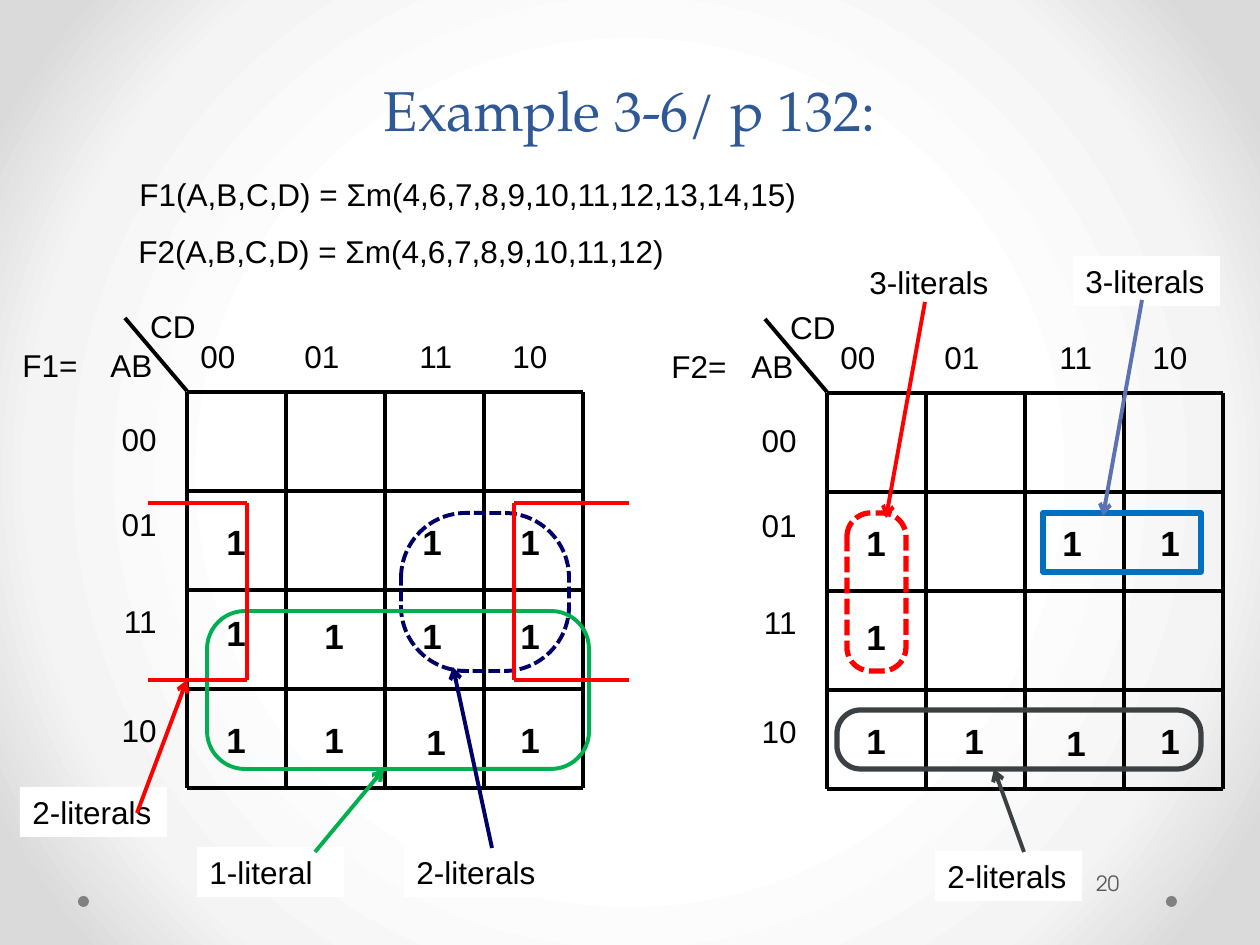
from dataclasses import dataclass, field

from lxml.etree import SubElement
from pptx import Presentation
from pptx.dml.color import RGBColor
from pptx.enum.dml import MSO_LINE_DASH_STYLE as Dash
from pptx.enum.shapes import MSO_CONNECTOR as Link, MSO_SHAPE as Preset
from pptx.enum.text import MSO_ANCHOR as Anchor, PP_ALIGN as Align
from pptx.oxml import parse_xml
from pptx.oxml.ns import nsdecls, qn
from pptx.util import Emu, Pt

PX_PER_INCH = 126
CELL = 99
MAP_SIZE = 4 * CELL
BLACK, WHITE, RED, NAVY, GREEN = "000000", "FFFFFF", "FF0000", "000066", "00B050"
BLUE, SLATE, INDIGO = "0070C0", "3B4042", "5C72B2"


@dataclass
class KarnaughMap:
    name: str
    left: int
    top: int
    name_left: int
    axis_tab: int
    ones: list[tuple[int, int]]
    nudges: dict[tuple[int, int], tuple[int, int]] = field(default_factory=dict)


@dataclass
class Loop:
    preset: int
    box: tuple[int, int, int, int]
    color: str
    weight: float
    rounding: float | None = None
    dashed: bool = False


@dataclass
class Callout:
    text: str
    left: int
    top: int
    start: tuple[int, int]
    end: tuple[int, int]
    color: str


MAPS = [
    KarnaughMap("F1=", 187, 392, 10, 88,
                [(0, 1), (2, 1), (3, 1), *((c, r) for r in (2, 3) for c in range(4))],
                {(0, 2): (0, -3), (2, 3): (4, 2)}),
    KarnaughMap("F2=", 827, 393, 659, 80,
                [(0, 1), (2, 1), (3, 1), (0, 2), *((c, 3) for c in range(4))],
                {(2, 3): (4, 2)}),
]
ONE_TOPS = (0, 122, 216, 320)
COLUMN_TABS = [104, 219, 312]
ROW_CODES = [("00", 0), ("01", 47), ("11", 59), ("10", 71)]

LOOPS = [
    Loop(Preset.ROUNDED_RECTANGLE, (401, 513, 168, 158), NAVY, 2.25, 0.41, True),
    Loop(Preset.ROUNDED_RECTANGLE, (207, 611, 382, 158), GREEN, 2.25, 0.24),
    Loop(Preset.RECTANGLE, (1043, 513, 158, 59), BLUE, 3),
    Loop(Preset.ROUNDED_RECTANGLE, (837, 710, 364, 59), SLATE, 3, 0.4),
    Loop(Preset.ROUNDED_RECTANGLE, (847, 513, 59, 158), RED, 3, 0.4, True),
]
CALLOUTS = [
    Callout("1-literal", 197, 847, (315, 852), (384, 769), GREEN),
    Callout("2-literals", 20, 787, (137, 813), (187, 680), RED),
    Callout("2-literals", 404, 847, (492, 848), (453, 667), NAVY),
    Callout("2-literals", 935, 851, (1024, 852), (994, 769), SLATE),
    Callout("3-literals", 1073, 256, (1142, 300), (1103, 516), INDIGO),
    Callout("3-literals", 857, 257, (925, 302), (886, 518), RED),
]


def px(length: int) -> Emu:
    return Emu(round(length * 914400 / PX_PER_INCH))


def rgb(color: str) -> RGBColor:
    return RGBColor.from_string(color)


def set_tabs(paragraph, stops: list[int]) -> None:
    tab_list = SubElement(paragraph._p.get_or_add_pPr(), qn("a:tabLst"))
    for stop in stops:
        SubElement(tab_list, qn("a:tab"), pos=str(px(stop)), algn="l")


def write(paragraph, text: str, size: int = 18, font: str = "Arial",
          color: str = BLACK, bold: bool = False) -> None:
    run = paragraph.add_run()
    run.text = text
    run.font.size, run.font.name, run.font.bold = Pt(size), font, bold
    run.font.color.rgb = rgb(color)


def add_label(parent, text: str, left: int, top: int, width: int, height: int = 50,
              align=Align.LEFT, tabs: list[int] | None = None, **style):
    label = parent.add_textbox(px(left), px(top), px(width), px(height))
    label.text_frame.word_wrap = True
    paragraph = label.text_frame.paragraphs[0]
    paragraph.alignment = align
    if tabs:
        set_tabs(paragraph, tabs)
    write(paragraph, text, **style)
    return label


def add_line(parent, start: tuple[int, int], end: tuple[int, int], color: str,
             weight: float = 2.25, arrow: bool = False) -> None:
    line = parent.add_connector(Link.STRAIGHT, *map(px, (*start, *end)))
    line.line.color.rgb = rgb(color)
    line.line.width = Pt(weight)
    if arrow:
        SubElement(line.line._get_or_add_ln(), qn("a:tailEnd"), type="arrow")
    SubElement(line._element.spPr, qn("a:effectLst"))


def add_plain(parent, preset: int, box: tuple[int, int, int, int], fill: str | None):
    shape = parent.add_shape(preset, *map(px, box))
    shape.shadow.inherit = False
    shape.line.fill.background()
    if fill:
        shape.fill.solid()
        shape.fill.fore_color.rgb = rgb(fill)
    else:
        shape.fill.background()
    return shape


def add_map(parent, kmap: KarnaughMap) -> None:
    left, top = kmap.left, kmap.top
    group = parent.add_group_shape().shapes
    for col, row in kmap.ones:
        dx, dy = kmap.nudges.get((col, row), (0, 0))
        add_label(group, "1", left + 27 + 98 * col + dx, top + ONE_TOPS[row] + dy, 42, 54,
                  Align.CENTER, size=20, bold=True)
    for offset in range(0, MAP_SIZE + 1, CELL):
        add_line(group, (left + offset, top), (left + offset, top + MAP_SIZE), BLACK, 2.13)
        add_line(group, (left, top + offset), (left + MAP_SIZE, top + offset), BLACK, 2.13)
    add_line(group, (left, top - 1), (left - 62, top - 74), BLACK)
    add_label(group, "00\t01\t11\t10", left + 1, top - 61, 387, tabs=COLUMN_TABS)
    add_label(group, "CD", left - 69, top - 91, 90, align=Align.RIGHT)
    add_label(group, f"{kmap.name}\tAB", kmap.name_left, top - 52, 178, tabs=[kmap.axis_tab])
    (first_code, _), *other_codes = ROW_CODES
    rows = add_label(group, first_code, left - 108, top + 22, 90, 357, Align.RIGHT)
    for code, gap in other_codes:
        paragraph = rows.text_frame.add_paragraph()
        paragraph.alignment = Align.RIGHT
        paragraph.space_before = px(gap)
        write(paragraph, code)


def add_loop(parent, loop: Loop) -> None:
    outline = add_plain(parent, loop.preset, loop.box, None)
    outline.line.color.rgb = rgb(loop.color)
    outline.line.width = Pt(loop.weight)
    if loop.rounding is not None:
        outline.adjustments[0] = loop.rounding
    if loop.dashed:
        outline.line.dash_style = Dash.SQUARE_DOT


def add_bracket(parent, outer: int, inner: int) -> None:
    group = parent.add_group_shape().shapes
    corners = [(outer, 503), (inner, 503), (inner, 680), (outer, 680)]
    for start, end in zip(corners, corners[1:]):
        add_line(group, start, end, RED)


def add_callout(parent, callout: Callout) -> None:
    tag = add_plain(parent, Preset.RECTANGLE, (callout.left, callout.top, 147, 50), WHITE)
    tag.text_frame.word_wrap = True
    tag.text_frame.vertical_anchor = Anchor.TOP
    paragraph = tag.text_frame.paragraphs[0]
    paragraph.alignment = Align.LEFT
    write(paragraph, callout.text)
    add_line(parent, callout.start, callout.end, callout.color, arrow=True)


def paint_background(slide, stops: list[tuple[int, str]]) -> None:
    slide.background.fill.solid()
    solid = slide._element.xpath(".//p:bgPr/a:solidFill")[0]
    marks = "".join(f'<a:gs pos="{pos * 1000}"><a:srgbClr val="{color}"/></a:gs>'
                    for pos, color in stops)
    solid.getparent().replace(solid, parse_xml(
        f'<a:gradFill {nsdecls("a")} rotWithShape="1"><a:gsLst>{marks}</a:gsLst>'
        '<a:path path="circle"><a:fillToRect l="50000" t="50000" r="50000" b="50000"/>'
        '</a:path></a:gradFill>'))


def main() -> None:
    deck = Presentation()
    deck.slide_width, deck.slide_height = px(1260), px(945)
    slide = deck.slides.add_slide(deck.slide_layouts[6])
    shapes = slide.shapes
    paint_background(slide, [(50, WHITE), (76, "F4F4F4"), (92, "DADADA")])
    for dot_left in (1166, 78):
        add_plain(shapes, Preset.OVAL, (dot_left, 896, 11, 11), "808080")
    title = add_label(shapes, "Example 3-6/ p 132:", 63, 78, 1134, 71, Align.CENTER,
                      size=32, font="TeX Gyre Pagella", color="2F5897")
    title.text_frame.vertical_anchor = Anchor.BOTTOM
    title.text_frame.paragraphs[0].line_spacing = Pt(58)
    number = add_label(shapes, "20", 1092, 858, 105, size=12,
                       font="TeX Gyre Adventor", color="595959")
    number.text_frame.vertical_anchor = Anchor.MIDDLE
    number.text_frame.margin_left = px(4)
    for kmap in MAPS:
        add_map(shapes, kmap)
    add_label(shapes, "F1(A,B,C,D) = Σm(4,6,7,8,9,10,11,12,13,14,15)", 127, 169, 697)
    add_label(shapes, "F2(A,B,C,D) = Σm(4,6,7,8,9,10,11,12)", 126, 226, 564)
    for loop in LOOPS:
        add_loop(shapes, loop)
    for outer, inner in ((148, 247), (629, 514)):
        add_bracket(shapes, outer, inner)
    for callout in CALLOUTS:
        add_callout(shapes, callout)
    deck.save("out.pptx")


if __name__ == "__main__":
    main()
